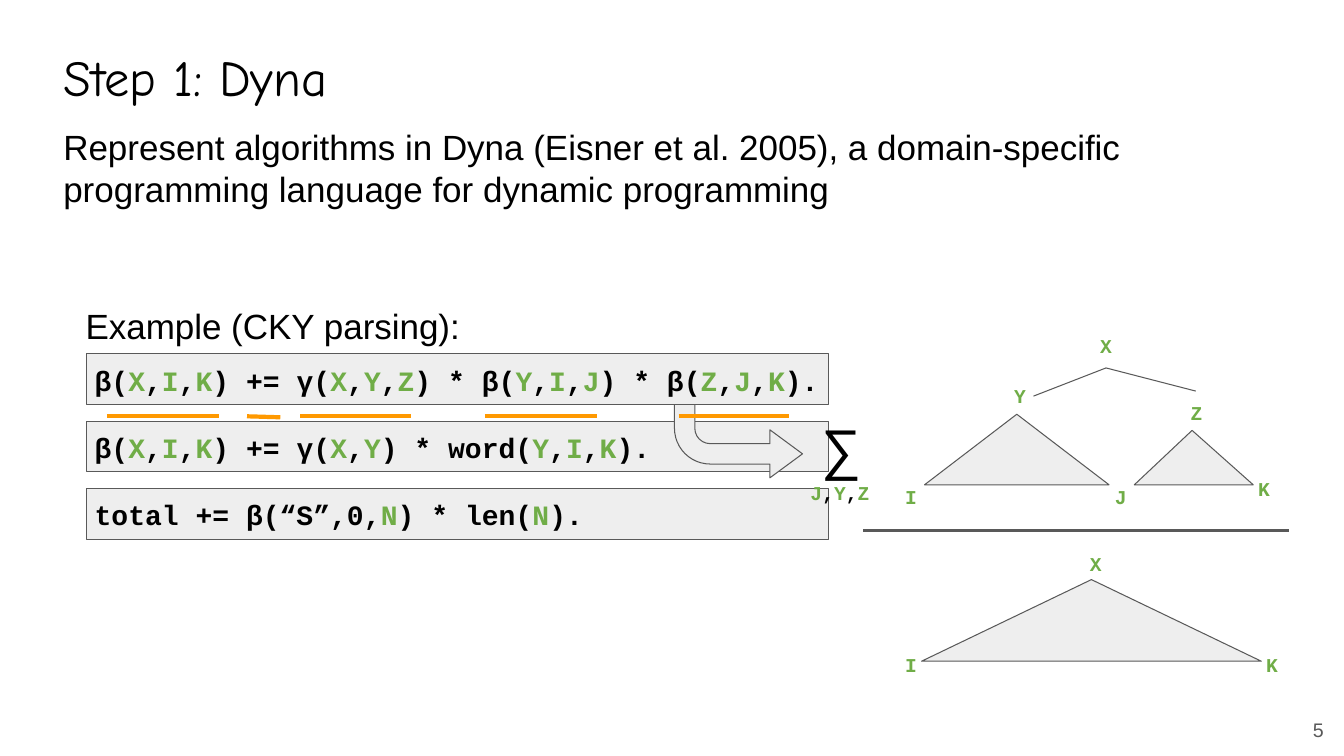
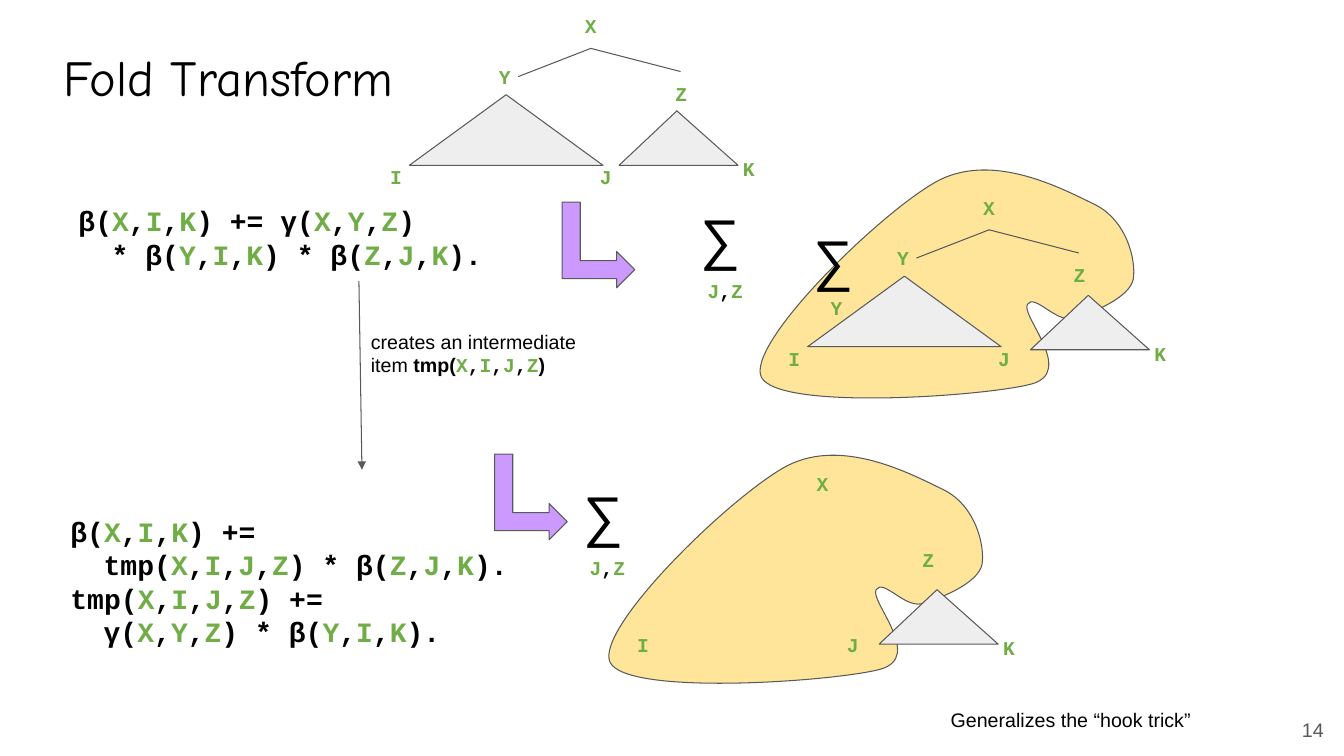
import itertools

import pptx
import pptx.dml.color
import pptx.enum.shapes
import pptx.enum.text
import pptx.oxml
import pptx.oxml.ns
import pptx.util

Inches, Pt = pptx.util.Inches, pptx.util.Pt
SHAPE = pptx.enum.shapes.MSO_SHAPE
ALIGN = pptx.enum.text.PP_ALIGN
ANCHOR = pptx.enum.text.MSO_ANCHOR
qn, parse_xml = pptx.oxml.ns.qn, pptx.oxml.parse_xml
NS = pptx.oxml.ns.nsdecls("a")

COLORS = {
    "ink": "000000", "variable": "70AD47", "outline": "595959",
    "gray": "EEEEEE", "blob": "FEE599", "arrow": "CC99FF", "underline": "FF9900",
}
SANS, MONO, HAND = "Arial", "Courier New", "Comic Neue"
VARIABLES = "IJKNXYZ"
CODE_INDENT = 0.33

# Cubic curves as (control, control, end), in inches from the blob's corner
BLOB_SIZE = (3.71, 2.26)
BLOB_START = (3.32, 0.34)
BLOB_CURVES = [
    ((3.64, 0.50), (3.73, 0.90), (3.70, 1.08)),
    ((3.66, 1.27), (3.28, 1.42), (3.10, 1.47)),
    ((2.93, 1.51), (2.72, 1.22), (2.65, 1.33)),
    ((2.58, 1.44), (3.13, 2.00), (2.69, 2.12)),
    ((2.25, 2.24), (0.17, 2.39), (0.01, 2.05)),
    ((-0.14, 1.71), (1.22, 0.39), (1.77, 0.10)),
    ((2.32, -0.18), (2.99, 0.18), BLOB_START),
]


def rgb(name):
    return pptx.dml.color.RGBColor.from_string(COLORS[name])


def set_frame(tf, inset=0.1, anchor=ANCHOR.TOP):
    frame = {"word_wrap": True, "auto_size": pptx.enum.text.MSO_AUTO_SIZE.NONE,
             "vertical_anchor": anchor}
    frame.update((f"margin_{side}", Inches(inset))
                 for side in ("left", "top", "right", "bottom"))
    for key, value in frame.items():
        setattr(tf, key, value)


def add_run(p, text, size, font=SANS, color="ink", bold=False):
    r = p.add_run()
    r.text = text
    for key, value in {"size": Pt(size), "name": font, "bold": bold}.items():
        setattr(r.font, key, value)
    r.font.color.rgb = rgb(color)


def add_code(p, text, size):
    """Add bold code runs, with the variables in their own colour."""
    for is_variable, chars in itertools.groupby(text, lambda c: c in VARIABLES):
        add_run(p, "".join(chars), size, MONO, "variable" if is_variable else "ink", True)


def text_frame(s, box, **frame):
    tf = s.shapes.add_textbox(*map(Inches, box)).text_frame
    set_frame(tf, **frame)
    return tf


def plain_text(s, box, text, size, line_spacing=None):
    p = text_frame(s, box).paragraphs[0]
    p.line_spacing = line_spacing
    add_run(p, text, size)


def label(s, x, y, text, width=0.29, align=ALIGN.LEFT):
    p = text_frame(s, (x, y, width, 0.44)).paragraphs[0]
    p.alignment = align
    add_code(p, text, 14)


def code_block(s, box, lines, gap=0):
    """Place (indented, code) lines with a gap in points between them."""
    tf = text_frame(s, box)
    for i, (indented, code) in enumerate(lines):
        p = tf.add_paragraph() if i else tf.paragraphs[0]
        p.line_spacing = Pt(24)
        p.space_before = Pt(gap if i else 0)
        if indented:
            p._p.get_or_add_pPr().set("marL", str(Inches(CODE_INDENT)))
        add_code(p, code, 20)


def paint(shape, fill):
    shape.shadow.inherit = False
    shape.fill.solid()
    shape.fill.fore_color.rgb = rgb(fill)
    shape.line.color.rgb = rgb("outline")
    shape.line.width = Pt(0.75)


def shape_at(s, kind, box, fill="gray", adjustments=()):
    shape = s.shapes.add_shape(kind, *map(Inches, box))
    paint(shape, fill)
    for i, value in enumerate(adjustments):
        shape.adjustments[i] = value
    return shape


def line(s, start, end, color="outline", width=0.75, arrow=False):
    connector = s.shapes.add_connector(
        pptx.enum.shapes.MSO_CONNECTOR.STRAIGHT, *map(Inches, (*start, *end)))
    connector.line.color.rgb = rgb(color)
    connector.line.width = Pt(width)
    props = connector.element.spPr
    if arrow:
        props.find(qn("a:ln")).append(parse_xml(f'<a:tailEnd {NS} type="triangle"/>'))
    props.append(parse_xml(f"<a:effectLst {NS}/>"))


def z_cone(s, x, y):
    """Right-hand triangle with its K."""
    shape_at(s, SHAPE.ISOSCELES_TRIANGLE, (x, y, 1.18, 0.54), adjustments=[0.486])
    label(s, x + 1.13, y + 0.36, "K")


def parse_tree(s, x, y, y_width=1.92, cone=(0.28, 0.62)):
    """X over the Y and Z triangles; (x, y) is where the branches meet."""
    shape_at(s, SHAPE.ISOSCELES_TRIANGLE, (x - 1.8, y + 0.46, y_width, 0.7))
    z_cone(s, x + cone[0], y + cone[1])
    for text, dx, dy in (("I", -2.09, 1.06), ("J", -0.01, 1.06),
                         ("Y", -1.01, 0.06), ("Z", 0.74, 0.23)):
        label(s, x + dx, y + dy, text)
    label(s, x - 0.59, y - 0.44, "X", 1.18, ALIGN.CENTER)
    line(s, (x, y), (x - 0.72, y + 0.28))
    line(s, (x + 0.89, y + 0.23), (x, y))


def summation(s, x, y, indices, dx, dy):
    plain_text(s, (x, y, 0.79, 0.88), "∑", 40)
    label(s, x + dx, y + dy, indices, 0.79)


def blob(s, x, y):
    """Closed outline whose straight segments are turned into cubic curves."""
    builder = s.shapes.build_freeform(*map(Inches, BLOB_START))
    builder.add_line_segments([tuple(map(Inches, end)) for _, _, end in BLOB_CURVES])
    shape = builder.convert_to_shape()
    box = dict(zip(("left", "top", "width", "height"), map(Inches, (x, y, *BLOB_SIZE))))
    for key, value in box.items():
        setattr(shape, key, value)

    def point(pt):
        return f'<a:pt x="{Inches(pt[0])}" y="{Inches(pt[1])}"/>'

    curves = "".join(f'<a:cubicBezTo>{"".join(map(point, curve))}</a:cubicBezTo>'
                     for curve in BLOB_CURVES)
    outline = parse_xml(
        f'<a:path {NS} w="{box["width"]}" h="{box["height"]}">'
        f"<a:moveTo>{point(BLOB_START)}</a:moveTo>{curves}<a:close/></a:path>")
    paths = shape.element.spPr.find(qn("a:custGeom")).find(qn("a:pathLst"))
    paths.replace(paths[0], outline)
    paint(shape, "blob")


def titled_slide(prs, title, number, title_width):
    s = prs.slides.add_slide(prs.slide_layouts[5])
    ph = s.shapes.title
    box = {"left": 0.53, "top": 0.36, "width": title_width, "height": 0.81}
    for key, value in box.items():
        setattr(ph, key, Inches(value))
    set_frame(ph.text_frame)
    p = ph.text_frame.paragraphs[0]
    p.alignment = ALIGN.LEFT
    add_run(p, title, 36, HAND)
    p = text_frame(s, (12.78, 7.12, 0.35, 0.24), inset=0, anchor=ANCHOR.MIDDLE).paragraphs[0]
    p.alignment = ALIGN.RIGHT
    add_run(p, str(number), 14, color="outline")
    return s


def rule_panel(s, x, y):
    """Three boxed rules, the first underlined and pointing to the right."""
    def rule_box(row):
        shape_at(s, SHAPE.RECTANGLE, (x, y + 0.67 * row, 7.36, 0.5))

    rule_box(1)
    rule_box(2)
    arrow = shape_at(s, SHAPE.BENT_ARROW, (x + 5.83, y + 0.42, 1.27, 0.81),
                     adjustments=[0.25, 0.294, 0.399, 0.438])
    arrow.rotation = 180
    arrow.element.spPr.xfrm.set("flipH", "1")
    rule_box(0)
    code_block(s, (x - 0.02, y, 7.55, 2.22), [
        (False, "β(X,I,K) += γ(X,Y,Z) * β(Y,I,J) * β(Z,J,K)."),
        (False, "β(X,I,K) += γ(X,Y) * word(Y,I,K)."),
        (False, "total += β(“S”,0,N) * len(N)."),
    ], gap=23.7)
    for left, width, drop in ((0.2, 1.11, 0), (1.59, 0.33, 0.01), (2.12, 1.1, 0),
                              (3.95, 1.11, 0), (5.87, 1.1, 0)):
        line(s, (x + left, y + 0.62), (x + left + width, y + 0.62 + drop), "underline", 3)


def result_triangle(s, x, y):
    shape_at(s, SHAPE.ISOSCELES_TRIANGLE, (x, y, 3.37, 0.81))
    for text, dx, dy in (("I", -0.26, 0.63), ("K", 3.32, 0.63), ("X", 1.57, -0.37)):
        label(s, x + dx, y + dy, text)


def dyna_slide(prs):
    s = titled_slide(prs, "Step 1: Dyna", 5, 11.11)
    plain_text(s, (0.53, 1.15, 11.56, 1.04),
               "Represent algorithms in Dyna (Eisner et al. 2005), a domain-specific "
               "programming language for dynamic programming", 25, Pt(30))
    plain_text(s, (0.75, 2.92, 4.85, 0.62), "Example (CKY parsing):", 25, Pt(30))
    rule_panel(s, 0.86, 3.51)
    summation(s, 8.05, 4, "J,Y,Z", -0.11, 0.67)
    parse_tree(s, 10.97, 3.65, y_width=1.83)
    line(s, (8.56, 5.26), (12.78, 5.26), width=2.25)
    result_triangle(s, 9.14, 5.75)


def folded_item(s, x, y):
    """Blob that hides the Y subtree, with the Z triangle in its mouth."""
    blob(s, x, y)
    for text, dx, dy in (("I", 0.18, 1.66), ("J", 2.26, 1.66),
                         ("Z", 3.01, 0.82), ("X", 1.96, 0.06)):
        label(s, x + dx, y + dy, text)
    z_cone(s, x + 2.68, y + 1.33)


def intermediate_note(s, box):
    tf = text_frame(s, box)
    add_run(tf.paragraphs[0], "creates an intermediate", 14)
    p = tf.add_paragraph()
    add_run(p, "item ", 14)
    add_run(p, "tmp(", 14, bold=True)
    add_code(p, "X,I,J,Z", 14)
    add_run(p, ")", 14, bold=True)


def fold_slide(prs):
    s = titled_slide(prs, "Fold Transform", 14, 4.58)
    parse_tree(s, 5.86, 0.48)
    code_block(s, (0.68, 1.92, 4.23, 0.88), [
        (False, "β(X,I,K) += γ(X,Y,Z)"),
        (True, "* β(Y,I,K) * β(Z,J,K)."),
    ])
    line(s, (3.56, 2.79), (3.59, 4.66), arrow=True)
    intermediate_note(s, (3.58, 3.17, 2.92, 0.67))
    code_block(s, (0.6, 5, 4.58, 1.55), [
        (False, "β(X,I,K) +="),
        (True, "tmp(X,I,J,Z) * β(Z,J,K)."),
        (False, "tmp(X,I,J,Z) +="),
        (True, "γ(X,Y,Z) * β(Y,I,K)."),
    ])
    blob(s, 7.54, 1.69)
    parse_tree(s, 9.81, 2.28, cone=(0.41, 0.65))
    summation(s, 7.97, 2.13, "Y", 0.17, 0.71)
    summation(s, 6.85, 1.92, "J,Z", 0.07, 0.75)
    folded_item(s, 6.04, 4.52)
    summation(s, 5.69, 4.67, "J,Z", 0.06, 0.75)
    for x, y in ((5.51, 2.07), (4.84, 4.57)):
        shape_at(s, SHAPE.BENT_UP_ARROW, (x, y, 0.85, 0.72), "arrow").rotation = 90
    plain_text(s, (9.33, 6.92, 2.92, 0.44), "Generalizes the “hook trick”", 14)


def main():
    prs = pptx.Presentation()
    prs.slide_width, prs.slide_height = Inches(13.33), Inches(7.5)
    dyna_slide(prs)
    fold_slide(prs)
    prs.save("out.pptx")


if __name__ == "__main__":
    main()
